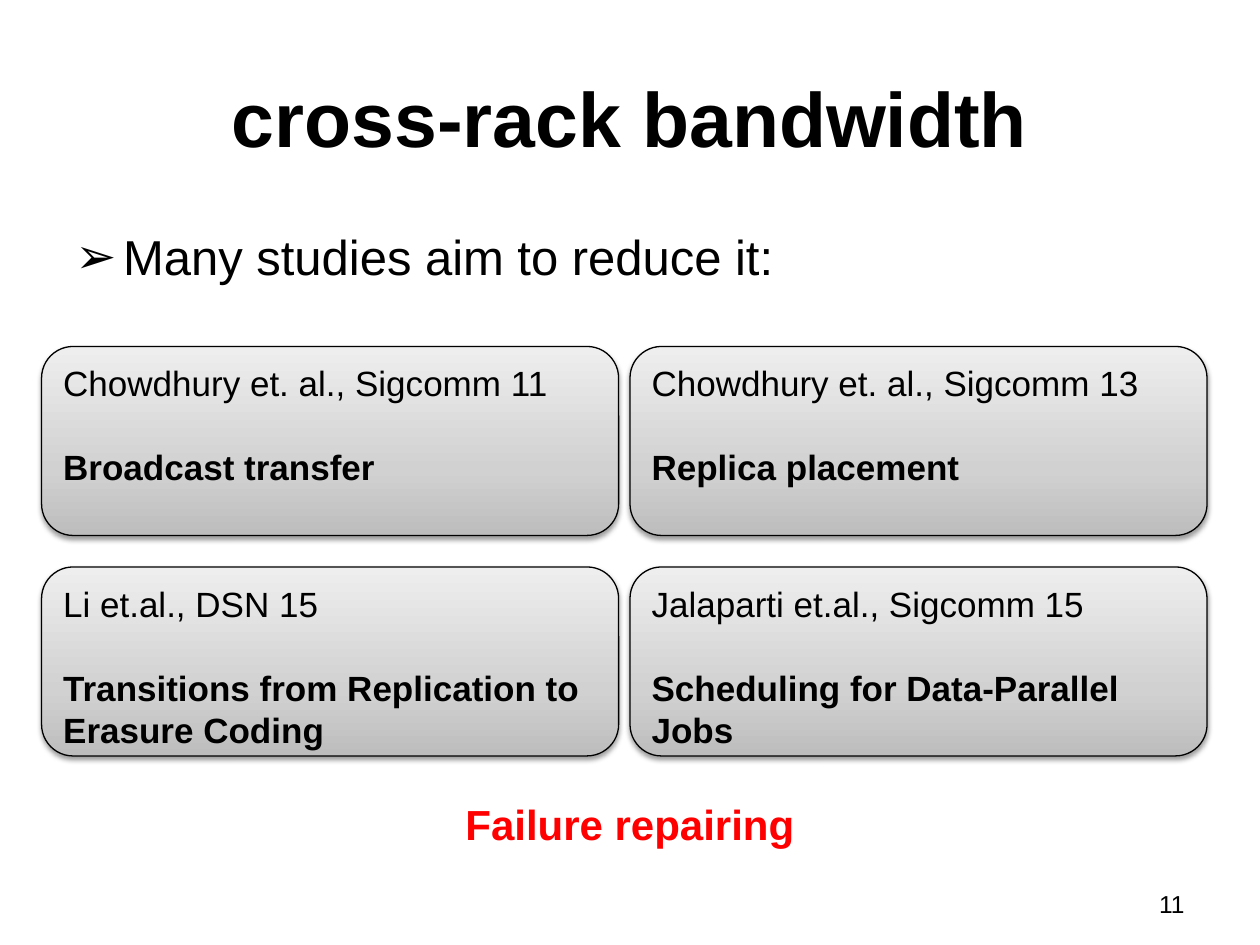
from copy import deepcopy

from lxml.etree import SubElement
from pptx import Presentation
from pptx.dml.color import RGBColor
from pptx.enum.shapes import MSO_SHAPE
from pptx.enum.text import MSO_ANCHOR, PP_ALIGN
from pptx.oxml import parse_xml
from pptx.oxml.ns import nsdecls, qn
from pptx.util import Inches, Pt

COLORS = {"text": "000000", "accent": "FF0000", "line": "000000"}
CARD_GRADIENT = [(0, "BDBDBD"), (0.35, "D1D1D1"), (1, "EEEEEE")]
FONT = "Arial"

STUDIES = [
    [("Chowdhury et. al., Sigcomm 11", "Broadcast transfer"),
     ("Chowdhury et. al., Sigcomm 13", "Replica placement")],
    [("Li et.al., DSN 15", "Transitions from Replication to Erasure Coding"),
     ("Jalaparti et.al., Sigcomm 15", "Scheduling for Data-Parallel Jobs")],
]
CARD_LEFT, CARD_TOP = 0.33, 2.75
CARD_WIDTH, CARD_HEIGHT = 4.58, 1.5
COLUMN_STEP, ROW_STEP = 4.67, 1.75


def add_span(para, text, size, bold=False, color="text"):
    span = para.add_run()
    span.text = text
    span.font.name = FONT
    span.font.size = Pt(size)
    span.font.bold = bold
    span.font.color.rgb = RGBColor.from_string(COLORS[color])


def add_text(page, bounds, text, size, align=PP_ALIGN.LEFT,
             anchor=MSO_ANCHOR.TOP, bold=False, color="text"):
    box = page.shapes.add_textbox(*map(Inches, bounds))
    frame = box.text_frame
    frame.word_wrap = True
    frame.vertical_anchor = anchor
    para = frame.paragraphs[0]
    para.alignment = align
    add_span(para, text, size, bold, color)
    return para


def set_bullet(para, char, indent):
    properties = para._p.get_or_add_pPr()
    properties.set("marL", str(Inches(indent)))
    properties.set("indent", str(-Inches(indent)))
    SubElement(properties, qn("a:buFont"), typeface=FONT)
    SubElement(properties, qn("a:buChar"), char=char)


def fill_gradient(shape):
    shape.fill.gradient()
    shape.fill.gradient_angle = 90
    stop_list = shape._element.spPr.find(qn("a:gradFill")).find(qn("a:gsLst"))
    stop_list.append(deepcopy(stop_list[-1]))
    for stop, (position, color) in zip(shape.fill.gradient_stops, CARD_GRADIENT):
        stop.position = position
        stop.color.rgb = RGBColor.from_string(color)


def add_shadow(shape):
    shape.shadow.inherit = False
    effects = shape._element.spPr.find(qn("a:effectLst"))
    effects.append(parse_xml(
        f'<a:outerShdw {nsdecls("a")} blurRad="{Pt(3.1)}" dist="{Pt(1.6)}" '
        'dir="5400000" rotWithShape="0"><a:srgbClr val="000000">'
        '<a:alpha val="38000"/></a:srgbClr></a:outerShdw>'))


def add_card(page, left, top, source, topic):
    card = page.shapes.add_shape(
        MSO_SHAPE.ROUNDED_RECTANGLE,
        *map(Inches, (left, top, CARD_WIDTH, CARD_HEIGHT)))
    fill_gradient(card)
    card.line.color.rgb = RGBColor.from_string(COLORS["line"])
    card.line.width = Pt(0.75)
    add_shadow(card)

    frame = card.text_frame
    frame.word_wrap = True
    frame.vertical_anchor = MSO_ANCHOR.TOP
    source_para = frame.paragraphs[0]
    topic_para = frame.add_paragraph()
    topic_para.space_before = Pt(24)
    for para in (source_para, topic_para):
        para.alignment = PP_ALIGN.LEFT
    add_span(source_para, source, 20)
    add_span(topic_para, topic, 20, bold=True)


def set_title(page, text):
    title = page.shapes.title
    title.left, title.top, title.width, title.height = map(
        Inches, (0.5, 0.3, 9, 1.25))
    title.text_frame.vertical_anchor = MSO_ANCHOR.MIDDLE
    para = title.text_frame.paragraphs[0]
    para.alignment = PP_ALIGN.CENTER
    add_span(para, text, 44, bold=True)


def main():
    deck = Presentation()
    deck.slide_width, deck.slide_height = Inches(10), Inches(7.5)
    page = deck.slides.add_slide(deck.slide_layouts[5])

    # Title and lead-in
    set_title(page, "cross-rack bandwidth")
    lead = add_text(page, (0.5, 1.75, 9, 0.75),
                    "Many studies aim to reduce it:", 28)
    set_bullet(lead, "➢", 0.38)

    # Grid of studies
    for row, studies in enumerate(STUDIES):
        for column, (source, topic) in enumerate(studies):
            add_card(page, CARD_LEFT + column * COLUMN_STEP,
                     CARD_TOP + row * ROW_STEP, source, topic)

    # Closing line and page number
    add_text(page, (0, 6.29, 10, 0.5), "Failure repairing", 24,
             PP_ALIGN.CENTER, bold=True, color="accent")
    add_text(page, (7.17, 7, 2.33, 0.35), "11", 14,
             PP_ALIGN.RIGHT, MSO_ANCHOR.MIDDLE)

    deck.save("out.pptx")


if __name__ == "__main__":
    main()
